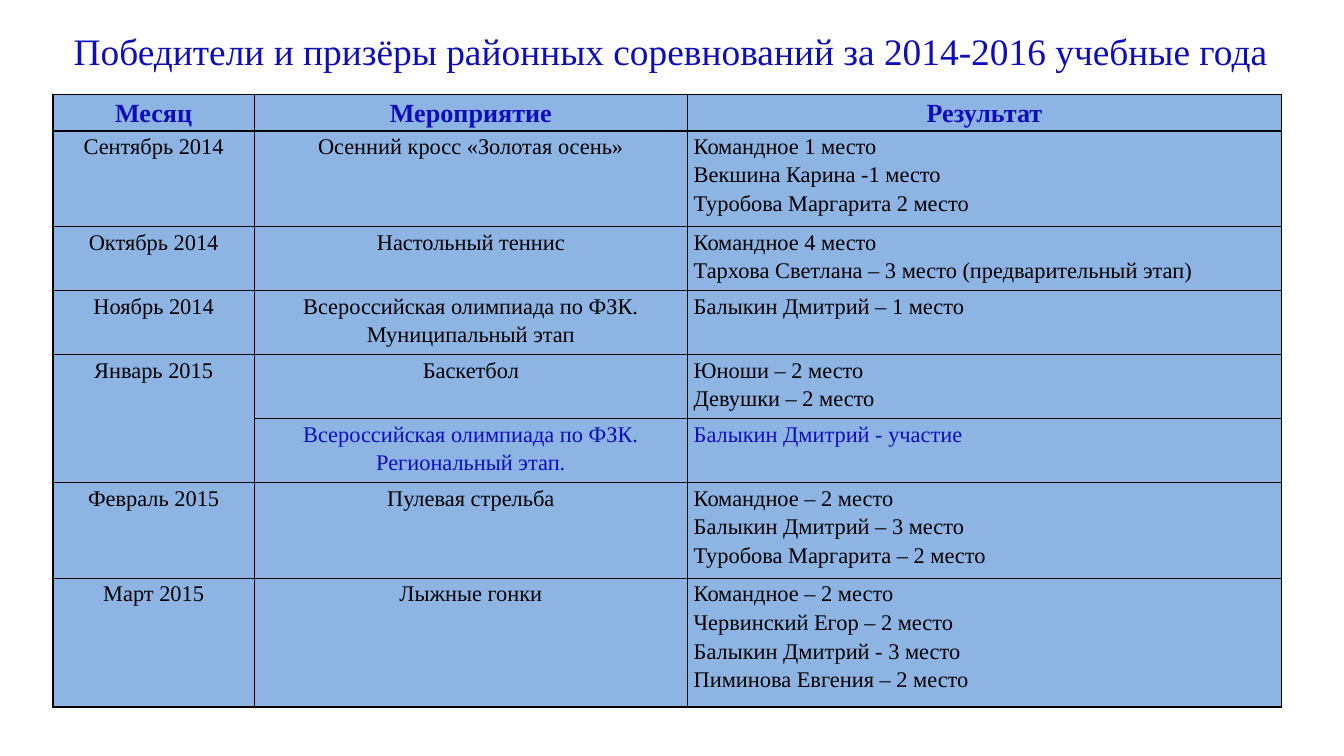
from dataclasses import dataclass

from lxml import etree
from pptx import Presentation
from pptx import util as u
from pptx.dml.color import RGBColor
from pptx.enum import text
from pptx.oxml import ns

BLUE = RGBColor(0x0D, 0x0D, 0xBB)
BLACK = RGBColor(0x00, 0x00, 0x00)
SKY = RGBColor(0x8E, 0xB4, 0xE3)
FONT = "Times New Roman"
CENTER, LEFT = text.PP_ALIGN.CENTER, text.PP_ALIGN.LEFT

HEADER_HEIGHT = 0.68
ROW_HEIGHTS = {2: 1.21, 3: 1.81, 4: 2.43}  # cm by number of text lines
COLUMN_WIDTHS = (3.81, 8.18, 11.23)
CELL_FORMAT = {
    "margin_left": u.Cm(0.12),
    "margin_right": u.Cm(0.12),
    "margin_top": 0,
    "margin_bottom": 0,
    "vertical_anchor": text.MSO_ANCHOR.TOP,
}


@dataclass
class Result:
    month: str  # empty when the month continues from the row above
    event: str
    places: list[str]
    lines: int = 2
    color: RGBColor = BLACK


HEADINGS = ("Месяц", "Мероприятие", "Результат")
RESULTS = [
    Result("Сентябрь 2014", "Осенний кросс «Золотая осень»",
           ["Командное 1 место", "Векшина Карина -1 место",
            "Туробова Маргарита 2 место"], lines=3),
    Result("Октябрь 2014", "Настольный теннис",
           ["Командное 4 место",
            "Тархова Светлана – 3 место (предварительный этап)"]),
    Result("Ноябрь 2014", "Всероссийская олимпиада по ФЗК. Муниципальный этап",
           ["Балыкин Дмитрий – 1 место"]),
    Result("Январь 2015", "Баскетбол",
           ["Юноши – 2 место", "Девушки – 2 место"]),
    Result("", "Всероссийская олимпиада по ФЗК. Региональный этап.",
           ["Балыкин Дмитрий - участие"], color=BLUE),
    Result("Февраль 2015", "Пулевая стрельба",
           ["Командное – 2 место", "Балыкин Дмитрий – 3 место",
            "Туробова Маргарита – 2 место"], lines=3),
    Result("Март 2015", "Лыжные гонки",
           ["Командное – 2 место", "Червинский Егор – 2 место",
            "Балыкин Дмитрий - 3 место", "Пиминова Евгения – 2 место"], lines=4),
]


def write(p, line: str, size: int, color: RGBColor, align, bold: bool = False) -> None:
    p.alignment = align
    r = p.add_run()
    r.text = line
    font = {"name": FONT, "size": u.Pt(size), "bold": bold}
    for name, value in font.items():
        setattr(r.font, name, value)
    r.font.color.rgb = color


def add_borders(cell) -> None:
    """Draw a thin black line on all four sides of a cell."""
    props = cell._tc.get_or_add_tcPr()
    for i, side in enumerate(("lnL", "lnR", "lnT", "lnB")):
        line = etree.Element(ns.qn(f"a:{side}"), w=str(u.Pt(1)))
        fill = etree.SubElement(line, ns.qn("a:solidFill"))
        etree.SubElement(fill, ns.qn("a:srgbClr"), val=str(BLACK))
        props.insert(i, line)


def format_cell(cell) -> None:
    for name, value in CELL_FORMAT.items():
        setattr(cell, name, value)
    cell.fill.solid()
    cell.fill.fore_color.rgb = SKY
    add_borders(cell)


def fill_cell(cell, lines: list[str], size: int, color: RGBColor, align,
              bold: bool = False) -> None:
    tf = cell.text_frame
    for i, line in enumerate(lines):
        p = tf.add_paragraph() if i else tf.paragraphs[0]
        p.line_spacing = 1.15
        write(p, line, size, color, align, bold)


def add_title(s, title: str) -> None:
    sp = s.shapes.add_textbox(u.Cm(0.58), u.Cm(0.41), u.Cm(24.2), u.Cm(1.88))
    tf = sp.text_frame
    tf.word_wrap = True
    tf.auto_size = text.MSO_AUTO_SIZE.SHAPE_TO_FIT_TEXT
    write(tf.paragraphs[0], title, 20, BLUE, CENTER)


def add_results(s, results: list[Result]) -> None:
    heights = [HEADER_HEIGHT] + [ROW_HEIGHTS[res.lines] for res in results]
    sp = s.shapes.add_table(
        len(heights), len(COLUMN_WIDTHS), u.Cm(1), u.Cm(1.79),
        u.Cm(sum(COLUMN_WIDTHS)), u.Cm(sum(heights)))
    table = sp.table
    table.first_row = table.horz_banding = False
    for column, width in zip(table.columns, COLUMN_WIDTHS):
        column.width = u.Cm(width)
    for row, height in zip(table.rows, heights):
        row.height = u.Cm(height)
    for cell in table.iter_cells():
        format_cell(cell)

    # Header row
    for col, heading in enumerate(HEADINGS):
        fill_cell(table.cell(0, col), [heading], 14, BLUE, CENTER, bold=True)

    # Result rows
    for row, res in enumerate(results, start=1):
        if res.month:
            fill_cell(table.cell(row, 0), [res.month], 12, res.color, CENTER)
        else:
            table.cell(row - 1, 0).merge(table.cell(row, 0))
        fill_cell(table.cell(row, 1), [res.event], 12, res.color, CENTER)
        fill_cell(table.cell(row, 2), res.places, 12, res.color, LEFT)


def main() -> None:
    prs = Presentation()
    prs.slide_width, prs.slide_height = u.Cm(25.4), u.Cm(14.29)
    s = prs.slides.add_slide(prs.slide_layouts[6])
    add_title(s, "Победители и призёры районных соревнований за 2014-2016 учебные года")
    add_results(s, RESULTS)
    prs.save("out.pptx")


if __name__ == "__main__":
    main()
